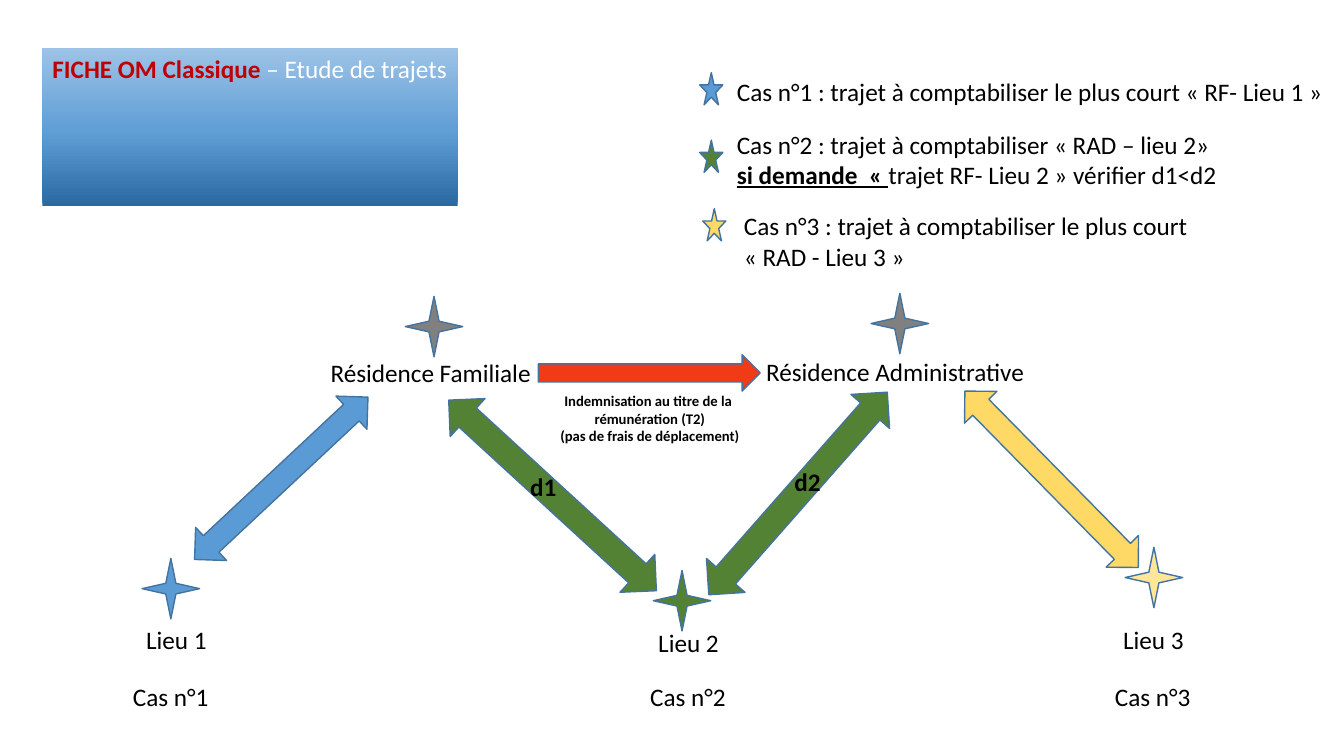
"""Build the slide on travel cases between residences and work places."""
from copy import deepcopy
from math import atan2, degrees, hypot

from pptx import Presentation
from pptx.dml.color import RGBColor
from pptx.enum.shapes import MSO_SHAPE
from pptx.enum.text import MSO_ANCHOR, MSO_AUTO_SIZE, PP_ALIGN
from pptx.util import Inches, Pt

COLORS = {
    "blue": "5B9BD5", "green": "548235", "yellow": "FFD966", "pale": "FFE699",
    "grey": "808080", "orange": "F13B17", "outline": "43739E",
    "red": "C00000", "white": "FFFFFF", "black": "000000",
}
TITLE_BOX = (0.42, 0.48, 4.12, 0.4)
TITLE = [[("FICHE OM Classique", {"bold": True}, "red"),
          (" – Etude de trajets", {"bold": False}, "white")]]
TITLE_GRADIENT = [(0, "2A69A2"), (0.48, "609ED6"), (1, "9DC3E6")]

PLAIN = {"size": Pt(18)}
BOLD = {"size": Pt(18), "bold": True}
SMALL = {"size": Pt(10.5), "bold": True}
STRESSED = {"bold": True, "underline": True}

LEGEND = [
    ("blue", (6.94, 0.72), (7.21, 0.71, 6.08, 0.4),
     [[("Cas n°1 : trajet à comptabiliser le plus court « RF- Lieu 1 »", {}, "black")]]),
    ("green", (6.94, 1.39), (7.21, 1.23, 5.07, 0.71),
     [[("Cas n°2 : trajet à comptabiliser « RAD – lieu 2»", {}, "black")],
      [("si demande  « ", STRESSED, "black"),
       ("trajet RF- Lieu 2 » vérifier d1<d2", {}, "black")]]),
    ("yellow", (6.97, 2.07), (7.28, 2.04, 4.65, 0.71),
     [[("Cas n°3 : trajet à comptabiliser le plus court", {}, "black")],
      [("« RAD - Lieu 3 »", {}, "black")]]),
]
PLACES = [
    ("blue", (1.41, 5.54)), ("grey", (4.02, 2.94)), ("grey", (8.64, 2.91)),
    ("pale", (11.16, 5.43)), ("green", (6.48, 5.66)),
]
TRIPS = [
    ("blue", (1.93, 5.55), (3.65, 3.94), 0.45),
    ("green", (4.45, 3.97), (6.51, 5.86), 0.51),
    ("green", (8.8, 3.89), (7.03, 5.9), 0.51),
    ("yellow", (9.57, 3.88), (11.29, 5.63), 0.45),
]
RESIDENCES = [
    ("Résidence Administrative", (7.5, 3.49, 2.79, 0.4)),
    ("Résidence Familiale", (3.18, 3.5, 2.21, 0.4)),
]
CASES = [
    ("Lieu 1", (1.35, 6.14), "Cas n°1", 1.22),
    ("Lieu 2", (6.43, 6.17), "Cas n°2", 6.35),
    ("Lieu 3", (11.04, 6.14), "Cas n°3", 10.96),
]
DISTANCES = [("d1", (5.16, 4.63, 0.46, 0.4)), ("d2", (7.78, 4.58, 0.46, 0.4))]
PAYMENT_ARROW = (5.34, 3.52, 2.2, 0.36)
PAYMENT_BOX = (5.44, 3.84, 2.01, 0.63)
PAYMENT = ["Indemnisation au titre de la ", "rémunération (T2)",
           "(pas de frais de déplacement)"]


def rgb(name):
    return RGBColor.from_string(COLORS[name])


def fill_text(frame, paragraphs, style, align=PP_ALIGN.LEFT):
    frame.word_wrap = False
    frame.auto_size = MSO_AUTO_SIZE.SHAPE_TO_FIT_TEXT
    for index, runs in enumerate(paragraphs):
        paragraph = frame.add_paragraph() if index else frame.paragraphs[0]
        paragraph.alignment = align
        paragraph.line_spacing = 1.0
        for words, extra, color in runs:
            run = paragraph.add_run()
            run.text = words
            run.font.name = "Calibri"
            run.font.color.rgb = rgb(color)
            for key, value in {**style, **extra}.items():
                setattr(run.font, key, value)


def add_label(slide, box, paragraphs, style=PLAIN, align=PP_ALIGN.LEFT):
    label = slide.shapes.add_textbox(*map(Inches, box))
    fill_text(label.text_frame, paragraphs, style, align)


def add_figure(slide, kind, box, color, rotation=0):
    figure = slide.shapes.add_shape(kind, *map(Inches, box))
    figure.shadow.inherit = False
    figure.fill.solid()
    figure.fill.fore_color.rgb = rgb(color)
    figure.line.color.rgb = rgb("outline")
    figure.line.width = Pt(1)
    figure.rotation = rotation


def add_trip(slide, color, start, end, height):
    across, down = end[0] - start[0], end[1] - start[1]
    length = hypot(across, down)
    left = (start[0] + end[0] - length) / 2
    top = (start[1] + end[1] - height) / 2
    add_figure(slide, MSO_SHAPE.LEFT_RIGHT_ARROW, (left, top, length, height),
               color, degrees(atan2(down, across)))


def format_title(title):
    title.left, title.top, title.width, title.height = map(Inches, TITLE_BOX)
    fill_text(title.text_frame, TITLE, PLAIN)
    title.text_frame.vertical_anchor = MSO_ANCHOR.TOP
    title.fill.gradient()
    title.fill.gradient_angle = 90
    first_stop = next(title._element.spPr.iter("{*}gs"))
    first_stop.addnext(deepcopy(first_stop))
    for stop, (position, color) in zip(title.fill.gradient_stops, TITLE_GRADIENT):
        stop.position = position
        stop.color.rgb = RGBColor.from_string(color)


def main():
    deck = Presentation()
    deck.slide_width, deck.slide_height = Inches(13.33), Inches(7.5)
    slide = deck.slides.add_slide(deck.slide_layouts[5])
    format_title(slide.shapes.title)
    add_figure(slide, MSO_SHAPE.RIGHT_ARROW, PAYMENT_ARROW, "orange")
    for name, box in RESIDENCES:
        add_label(slide, box, [[(name, {}, "black")]])
    add_label(slide, PAYMENT_BOX, [[(line, {}, "black")] for line in PAYMENT],
              SMALL, PP_ALIGN.CENTER)
    for color, corner in PLACES:
        add_figure(slide, MSO_SHAPE.STAR_4_POINT, (*corner, 0.57, 0.6), color)
    for trip in TRIPS:
        add_trip(slide, *trip)
    for color, corner, box, paragraphs in LEGEND:
        add_figure(slide, MSO_SHAPE.STAR_5_POINT, (*corner, 0.23, 0.32), color)
        add_label(slide, box, paragraphs)
    for place, corner, case, case_left in CASES:
        add_label(slide, (*corner, 0.81, 0.4), [[(place, {}, "black")]])
        add_label(slide, (case_left, 6.71, 0.96, 0.4), [[(case, {}, "black")]])
    for name, box in DISTANCES:
        add_label(slide, box, [[(name, {}, "black")]], BOLD)
    deck.save("out.pptx")


if __name__ == "__main__":
    main()
